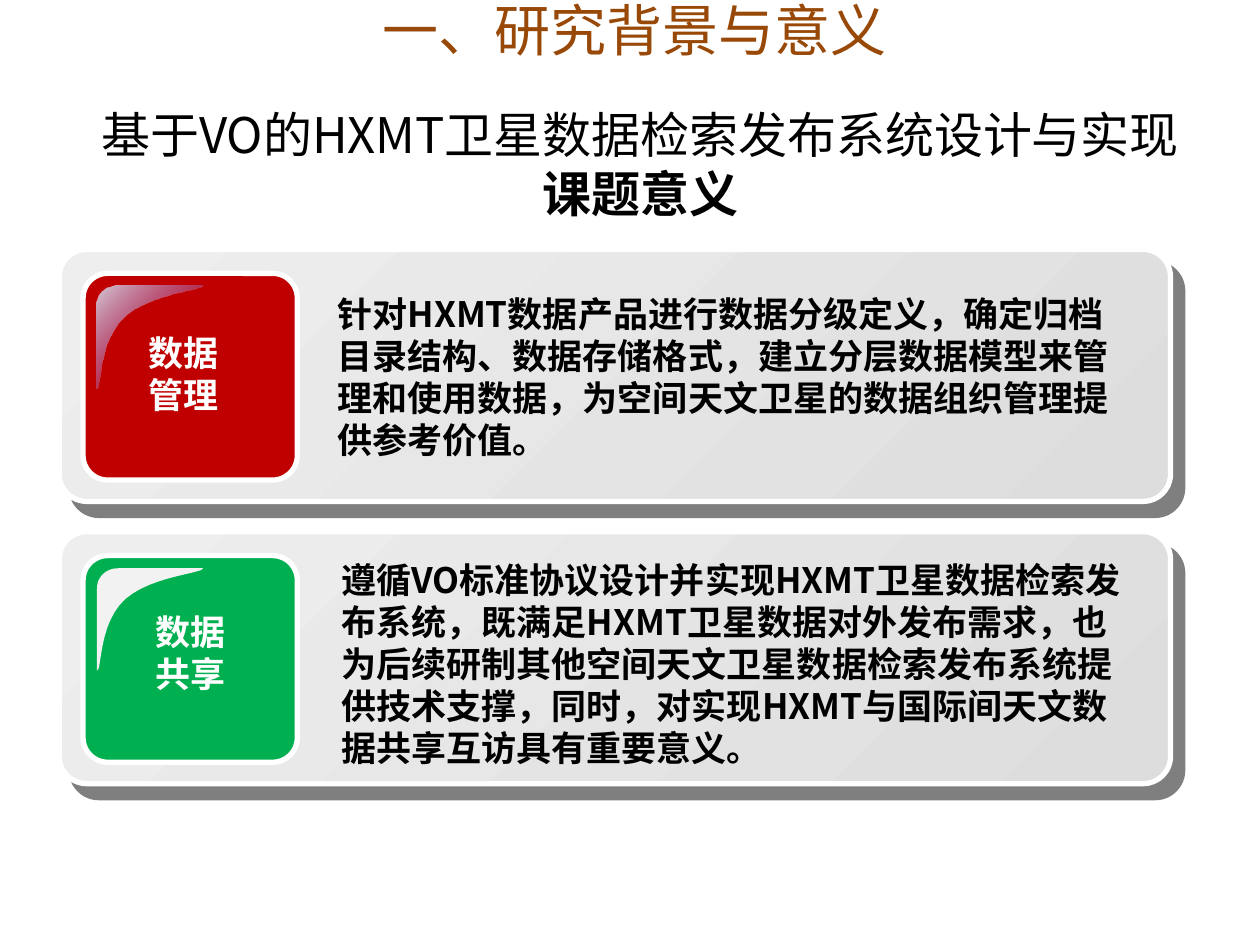
from dataclasses import dataclass

from lxml.etree import SubElement
from pptx import Presentation
from pptx.dml.color import RGBColor
from pptx.enum.shapes import MSO_SHAPE as Shape
from pptx.enum.text import MSO_ANCHOR as Anchor, PP_ALIGN as Align
from pptx.oxml.ns import qn
from pptx.util import Inches, Pt


@dataclass(frozen=True)
class Theme:
    heading: str = "984807"
    text: str = "000000"
    white: str = "FFFFFF"
    panel: tuple = ("EEEEEE", "DDDDDD")
    red: str = "C00000"
    green: str = "00B050"
    purple_gloss: tuple = ("D5C9D5", "800080")
    pale_gloss: str = "F2F2F2"
    cjk_font: str = "Noto Sans CJK SC"
    latin_font: str = "Arial"
    title_size: int = 32
    subtitle_size: int = 28
    body_size: int = 20


THEME = Theme()

# Gloss outline, measured from the top left of its tile
GLOSS_START = (0.28, 0.1)
GLOSS_CURVES = [
    ((0.18, 0.1), (0.11, 0.17), (0.11, 0.26)),
    ((0.11, 0.26), (0.11, 0.91), (0.11, 0.91)),
    ((0.15, 0.92), (0.12, 0.53), (0.34, 0.34)),
    ((0.55, 0.16), (0.96, 0.14), (0.95, 0.1)),
]


def rgb(value):
    return RGBColor.from_string(value)


def style(paragraph, size, color, font, bold=False, align=Align.LEFT):
    paragraph.alignment = align
    paragraph.font.size = Pt(size)
    paragraph.font.bold = bold
    paragraph.font.name = font
    paragraph.font.color.rgb = rgb(color)


def set_fill(shape, color):
    """Fill with one colour, or with a diagonal gradient for a pair."""
    if isinstance(color, str):
        shape.fill.solid()
        shape.fill.fore_color.rgb = rgb(color)
        return
    shape.fill.gradient()
    shape.fill.gradient_angle = 315
    for stop, stop_color in zip(shape.fill.gradient_stops, color):
        stop.color.rgb = rgb(stop_color)


def add_rounded(slide, left, top, width, height, radius, color):
    box = slide.shapes.add_shape(Shape.ROUNDED_RECTANGLE, Inches(left), Inches(top),
                                 Inches(width), Inches(height))
    box.adjustments[0] = radius
    box.shadow.inherit = False
    set_fill(box, color)
    box.line.color.rgb = rgb(THEME.white)
    box.line.width = Pt(3)
    return box


def add_hard_shadow(shape):
    effects = shape._element.spPr.find(qn("a:effectLst"))
    shadow = SubElement(effects, qn("a:outerShdw"), blurRad="0", dist=str(Pt(10.6)),
                        dir=str(49 * 60000), algn="ctr", rotWithShape="0")
    color = SubElement(shadow, qn("a:srgbClr"), val=THEME.text)
    SubElement(color, qn("a:alpha"), val="50000")


def curve_points(start, curves, steps=12):
    """Sample a chain of cubic curves."""
    points = []
    for first, second, end in curves:
        for step in range(1, steps + 1):
            t = step / steps
            u = 1 - t
            points.append(tuple(
                u**3 * a + 3 * u**2 * t * b + 3 * u * t**2 * c + t**3 * d
                for a, b, c, d in zip(start, first, second, end)))
        start = end
    return points


def add_gloss(slide, left, top, color):
    def place(point):
        return Inches(left + point[0]), Inches(top + point[1])

    builder = slide.shapes.build_freeform(*place(GLOSS_START))
    builder.add_line_segments([place(p) for p in curve_points(GLOSS_START, GLOSS_CURVES)])
    gloss = builder.convert_to_shape()
    gloss.shadow.inherit = False
    gloss.line.fill.background()
    set_fill(gloss, color)
    if not isinstance(color, str):
        # The gradient fades out at its end
        last_color = gloss._element.spPr.findall(".//" + qn("a:srgbClr"))[-1]
        SubElement(last_color, qn("a:alpha"), val="0")


def add_text(slide, left, top, width, height, text, wrap=True):
    frame = slide.shapes.add_textbox(Inches(left), Inches(top),
                                     Inches(width), Inches(height)).text_frame
    frame.word_wrap = wrap
    frame.text = text
    return frame.paragraphs


def add_title(slide, text):
    title = slide.shapes.title
    title.left, title.top = Inches(0.47), Inches(0)
    title.width, title.height = Inches(9.14), Inches(0.47)
    title.text_frame.text = text
    title.text_frame.vertical_anchor = Anchor.MIDDLE
    style(title.text_frame.paragraphs[0], THEME.title_size, THEME.heading,
          THEME.cjk_font, align=Align.CENTER)


def add_subtitle(slide):
    topic, section = add_text(slide, 0.47, 0.78, 9.22, 1.04,
                              "基于VO的HXMT卫星数据检索发布系统设计与实现\n课题意义")
    style(topic, THEME.subtitle_size, THEME.text, THEME.cjk_font, align=Align.CENTER)
    style(section, THEME.subtitle_size, THEME.text, THEME.latin_font, True, Align.CENTER)


def add_card(slide, top, color, gloss, label, label_at, body, body_box):
    panel = add_rounded(slide, 0.47, top, 8.82, 2, 0.109, THEME.panel)
    add_hard_shadow(panel)
    tile_left, tile_top = 0.66, top + 0.19
    add_rounded(slide, tile_left, tile_top, 1.7, 1.64, 0.119, color)
    add_gloss(slide, tile_left, tile_top, gloss)
    for line in add_text(slide, *label_at, 0.77, 0.77, label, wrap=False):
        style(line, THEME.body_size, THEME.white, THEME.latin_font, True, Align.CENTER)
    for line in add_text(slide, *body_box, body):
        style(line, THEME.body_size, THEME.text, THEME.cjk_font, True)


def main():
    deck = Presentation()
    deck.slide_width, deck.slide_height = Inches(10), Inches(7.5)
    slide = deck.slides.add_slide(deck.slide_layouts[5])

    # Headings
    add_title(slide, "一、研究背景与意义")
    add_subtitle(slide)

    # Data management
    add_card(slide, 1.98, THEME.red, THEME.purple_gloss, "数据\v管理", (1.07, 2.58),
             "针对HXMT数据产品进行数据分级定义，确定归档目录结构、数据存储格式，"
             "建立分层数据模型来管理和使用数据，为空间天文卫星的数据组织管理提供参考价值。",
             (2.58, 2.27, 6.48, 1.45))

    # Data sharing
    add_card(slide, 4.22, THEME.green, THEME.pale_gloss, "数据\n共享", (1.13, 4.8),
             "遵循VO标准协议设计并实现HXMT卫星数据检索发布系统，既满足HXMT卫星数据对外发布需求，"
             "也为后续研制其他空间天文卫星数据检索发布系统提供技术支撑，"
             "同时，对实现HXMT与国际间天文数据共享互访具有重要意义。",
             (2.61, 4.38, 6.48, 1.78))

    deck.save("out.pptx")


if __name__ == "__main__":
    main()
